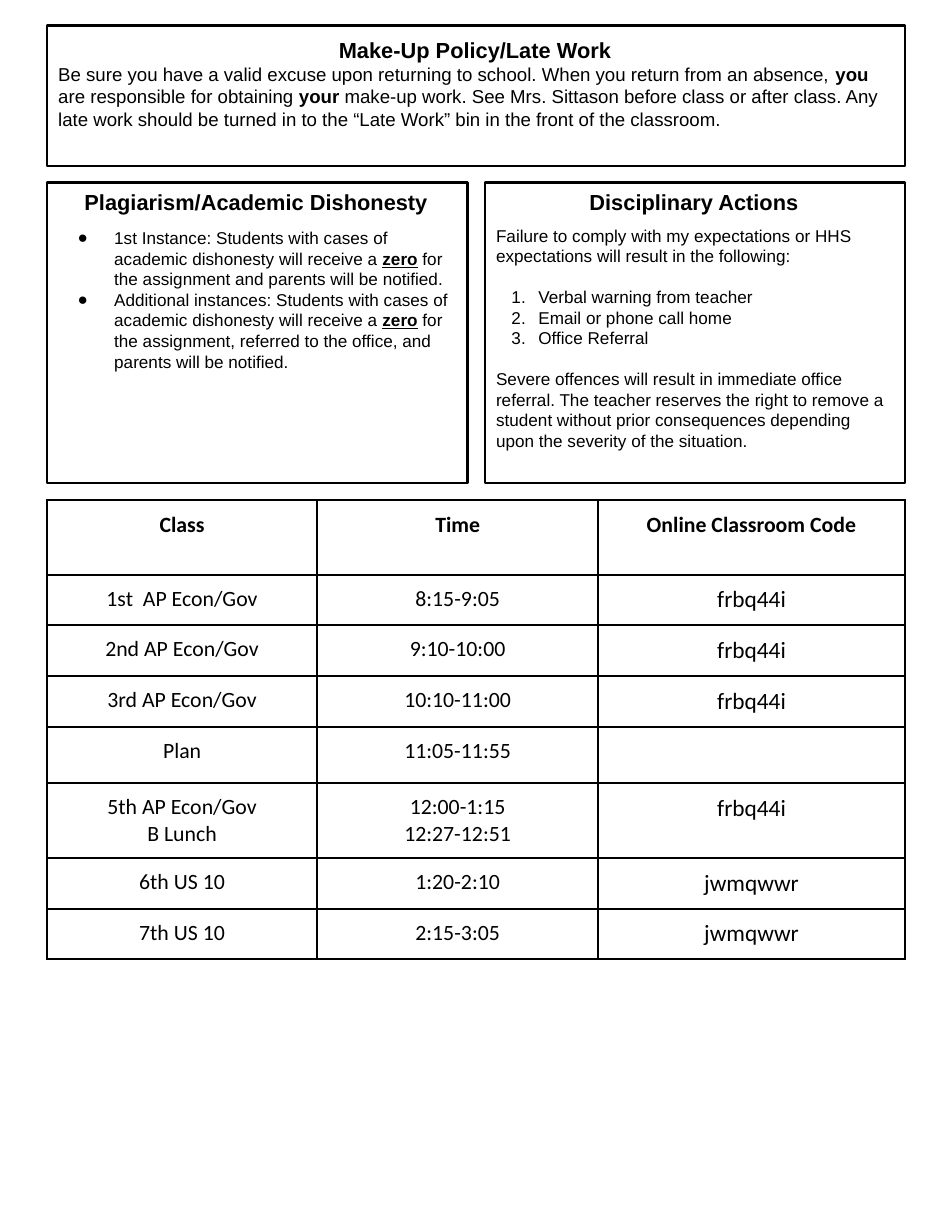
import dataclasses

import pptx
import pptx.dml.color
import pptx.enum.text
import pptx.oxml
import pptx.oxml.ns
import pptx.util

Cm = pptx.util.Cm
Pt = pptx.util.Pt
ALIGN = pptx.enum.text.PP_ALIGN
NAMESPACE = pptx.oxml.ns.nsdecls("a")


@dataclasses.dataclass(frozen=True)
class Theme:
    ink: str = "000000"
    paper: str = "FFFFFF"
    text_font: str = "Arial"
    table_font: str = "Calibri"
    heading: float = 14
    policy: float = 12
    body: float = 11
    cell: float = 14
    code: float = 15
    line: float = 1.5


THEME = Theme()
INK = pptx.dml.color.RGBColor.from_string(THEME.ink)
PAPER = pptx.dml.color.RGBColor.from_string(THEME.paper)

SCHEDULE = [
    ("Class", "Time", "Online Classroom Code"),
    ("1st  AP Econ/Gov", "8:15-9:05", "frbq44i"),
    ("2nd AP Econ/Gov", "9:10-10:00", "frbq44i"),
    ("3rd AP Econ/Gov", "10:10-11:00", "frbq44i"),
    ("Plan", "11:05-11:55", ""),
    ("5th AP Econ/Gov\nB Lunch", "12:00-1:15\n12:27-12:51", "frbq44i"),
    ("6th US 10", "1:20-2:10", "jwmqwwr"),
    ("7th US 10", "2:15-3:05", "jwmqwwr"),
]
COLUMN_WIDTHS = (6.12, 6.38, 6.95)
ROW_HEIGHTS = (1.68, 1.14, 1.14, 1.14, 1.26, 1.7, 1.14, 1.14)


def write(frame, text, size=THEME.body, font=THEME.text_font, bold=False,
          underline=False, align=ALIGN.LEFT, before=0, bullet=None,
          margin=0, hanging=0):
    """Add one paragraph; words between asterisks are bold, or also underlined."""
    paragraph = frame.paragraphs[0]
    if paragraph.runs:
        paragraph = frame.add_paragraph()
    paragraph.alignment = align
    paragraph.line_spacing = 1.0
    paragraph.space_before = Pt(before)
    paragraph.space_after = Pt(0)

    # Indents and list marks
    properties = paragraph._p.get_or_add_pPr()
    properties.set("marL", str(Cm(margin)))
    properties.set("indent", str(-Cm(hanging)))
    if bullet is None:
        marks = ["<a:buNone {}/>"]
    else:
        color = f'<a:srgbClr val="{THEME.ink}"/>'
        marks = ["<a:buClr {}>" + color + "</a:buClr>",
                 '<a:buFont {} typeface="' + font + '"/>']
        if bullet == "number":
            marks.append('<a:buAutoNum {} type="arabicPeriod"/>')
        else:
            marks.append('<a:buChar {} char="' + bullet + '"/>')
    for mark in marks:
        properties.append(pptx.oxml.parse_xml(mark.format(NAMESPACE)))

    for index, part in enumerate(text.split("*")):
        emphasis = index % 2 == 1
        run = paragraph.add_run()
        run.text = part
        run.font.name = font
        run.font.size = Pt(size)
        run.font.bold = bold or emphasis
        run.font.underline = underline and emphasis
        run.font.color.rgb = INK


def frame_box(shape, box, heading, inset):
    """Turn a placeholder into an outlined, headed box and return its text frame."""
    shape.left, shape.top, shape.width, shape.height = (Cm(value) for value in box)
    shape.fill.background()
    shape.line.color.rgb = INK
    shape.line.width = Pt(THEME.line)
    frame = shape.text_frame
    frame.word_wrap = True
    frame.auto_size = pptx.enum.text.MSO_AUTO_SIZE.NONE
    frame.vertical_anchor = pptx.enum.text.MSO_ANCHOR.TOP
    frame.margin_left = Cm(0.25)
    frame.margin_right = Cm(0.3)
    frame.margin_top = frame.margin_bottom = Cm(inset)
    write(frame, heading, size=THEME.heading, bold=True, align=ALIGN.CENTER)
    return frame


def build_policy(shape, box):
    frame = frame_box(shape, box, "Make-Up Policy/Late Work", inset=0.25)
    write(frame, "Be sure you have a valid excuse upon returning to school. When you "
          "return from an absence, *you* are responsible for obtaining *your* make-up "
          "work. See Mrs. Sittason before class or after class. Any late work should be "
          "turned in to the “Late Work” bin in the front of the classroom.",
          size=THEME.policy)


def build_plagiarism(shape, box):
    frame = frame_box(shape, box, "Plagiarism/Academic Dishonesty", inset=0.13)
    instances = (
        "1st Instance: Students with cases of academic dishonesty will receive a *zero* "
        "for the assignment and parents will be notified.",
        "Additional instances: Students with cases of academic dishonesty will receive a "
        "*zero* for the assignment, referred to the office, and parents will be notified.",
    )
    for index, text in enumerate(instances):
        write(frame, text, underline=True, before=0 if index else 8.5,
              bullet="●", margin=1.27, hanging=0.83)


def build_discipline(shape, box):
    frame = frame_box(shape, box, "Disciplinary Actions", inset=0.13)
    write(frame, "Failure to comply with my expectations or HHS expectations will "
          "result in the following:", before=7)
    steps = ("Verbal warning from teacher", "Email or phone call home", "Office Referral")
    for index, text in enumerate(steps):
        write(frame, text, before=0 if index else 13,
              bullet="number", margin=0.96, hanging=0.61)
    write(frame, "Severe offences will result in immediate office referral. The teacher "
          "reserves the right to remove a student without prior consequences depending "
          "upon the severity of the situation.", before=13)


def format_cell(cell):
    cell.margin_left = cell.margin_right = Cm(0.25)
    cell.margin_top = cell.margin_bottom = Cm(0.25)
    properties = cell._tc.get_or_add_tcPr()
    for side in "LRTB":
        properties.append(pptx.oxml.parse_xml(
            f'<a:ln{side} {NAMESPACE} w="{Pt(THEME.line)}"><a:solidFill>'
            f'<a:srgbClr val="{THEME.ink}"/></a:solidFill></a:ln{side}>'))
    cell.fill.solid()
    cell.fill.fore_color.rgb = PAPER


def build_schedule(slide, left, top):
    table = slide.shapes.add_table(
        len(SCHEDULE), len(COLUMN_WIDTHS), Cm(left), Cm(top),
        Cm(sum(COLUMN_WIDTHS)), Cm(sum(ROW_HEIGHTS))).table
    table.first_row = False
    table.horz_banding = False
    for column, width in zip(table.columns, COLUMN_WIDTHS):
        column.width = Cm(width)
    for row, height in zip(table.rows, ROW_HEIGHTS):
        row.height = Cm(height)
    for row_index, values in enumerate(SCHEDULE):
        header = row_index == 0
        for column_index, value in enumerate(values):
            cell = table.cell(row_index, column_index)
            format_cell(cell)
            is_code = column_index == 2 and not header
            for line in value.splitlines():
                write(cell.text_frame, line, font=THEME.table_font, bold=header,
                      size=THEME.code if is_code else THEME.cell, align=ALIGN.CENTER)


def main():
    presentation = pptx.Presentation()
    presentation.slide_width = Cm(21.59)
    presentation.slide_height = Cm(27.94)
    slide = presentation.slides.add_slide(presentation.slide_layouts[3])
    policy, plagiarism, discipline = slide.placeholders

    # Page grid in centimetres
    left, width, gap = 1.07, 19.46, 0.4
    half = (width - gap) / 2
    build_policy(policy, (left, 0.58, width, 3.18))
    build_plagiarism(plagiarism, (left, 4.14, half, 6.81))
    build_discipline(discipline, (left + half + gap, 4.14, half, 6.81))
    build_schedule(slide, left, 11.35)
    presentation.save("out.pptx")


if __name__ == "__main__":
    main()
